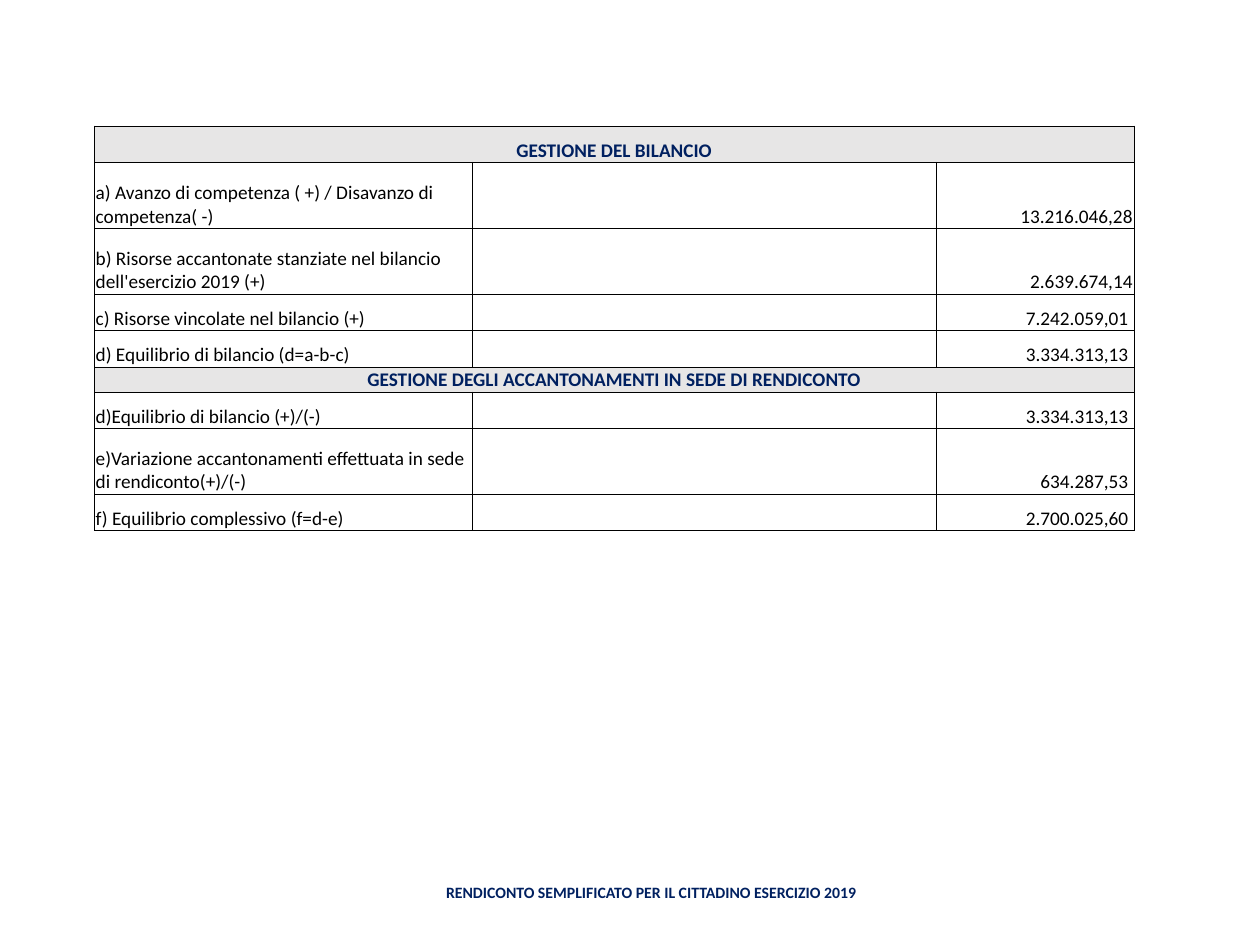
from lxml import etree
from pptx import Presentation
from pptx.dml.color import RGBColor
from pptx.enum.text import MSO_ANCHOR, PP_ALIGN
from pptx.oxml.ns import qn
from pptx.util import Pt

NAVY = RGBColor(0x00, 0x20, 0x60)
BLACK = RGBColor(0x00, 0x00, 0x00)
GREY = RGBColor(0xE7, 0xE6, 0xE6)

COLS = (216, 265, 113)
SHORT, TALL, THIN = 20.8, 37.7, 14.3

# Row height and texts; a single text is a heading across all columns.
ROWS = (
    (SHORT, "GESTIONE DEL BILANCIO"),
    (TALL, "a) Avanzo di competenza ( +) / Disavanzo di competenza( -)", "13.216.046,28"),
    (TALL, "b) Risorse accantonate stanziate nel bilancio dell'esercizio 2019 (+)", "2.639.674,14"),
    (SHORT, "c) Risorse vincolate nel bilancio (+)", "7.242.059,01 "),
    (SHORT, "d) Equilibrio di bilancio (d=a-b-c)", "3.334.313,13 "),
    (THIN, "GESTIONE DEGLI ACCANTONAMENTI IN SEDE DI RENDICONTO"),
    (SHORT, "d)Equilibrio di bilancio (+)/(-)", "3.334.313,13 "),
    (TALL, "e)Variazione accantonamenti effettuata in sede di rendiconto(+)/(-)", "634.287,53 "),
    (SHORT, "f) Equilibrio complessivo (f=d-e)", "2.700.025,60 "),
)


def write(frame, words, size, color, bold, align):
    frame.text = words
    para = frame.paragraphs[0]
    para.alignment = align
    for run in para.runs:
        font = run.font
        font.name, font.size, font.bold = "Calibri", Pt(size), bold
        font.color.rgb = color


def border(cell):
    props = cell._tc.get_or_add_tcPr()
    for side in ("lnL", "lnR", "lnT", "lnB"):
        line = etree.SubElement(props, qn(f"a:{side}"), w=str(Pt(0.5)))
        fill = etree.SubElement(line, qn("a:solidFill"))
        etree.SubElement(fill, qn("a:srgbClr"), val=str(BLACK))


def dress(cell, head):
    """Set the borders, insets, fill and empty-text size of a cell."""
    border(cell)
    cell.vertical_anchor = MSO_ANCHOR.BOTTOM
    cell.margin_left = cell.margin_right = cell.margin_top = Pt(0.7)
    cell.margin_bottom = 0
    if head:
        cell.fill.solid()
        cell.fill.fore_color.rgb = GREY
    else:
        cell.fill.background()
    end = cell.text_frame.paragraphs[0]._p.get_or_add_endParaRPr()
    end.set("sz", "1100")


def add_budget(slide, left, top):
    heights = [row[0] for row in ROWS]
    frame = slide.shapes.add_table(len(ROWS), len(COLS), Pt(left), Pt(top),
                                   Pt(sum(COLS)), Pt(sum(heights)))
    table = frame.table
    table.first_row = table.horz_banding = False
    for col, width in zip(table.columns, COLS):
        col.width = Pt(width)
    for i, (height, label, *value) in enumerate(ROWS):
        table.rows[i].height = Pt(height)
        cells = [table.cell(i, j) for j in range(len(COLS))]
        for cell in cells:
            dress(cell, not value)
        if value:
            write(cells[0].text_frame, label, 11, BLACK, False, PP_ALIGN.LEFT)
            write(cells[-1].text_frame, value[0], 11, BLACK, False, PP_ALIGN.RIGHT)
        else:
            cells[0].merge(cells[-1])
            write(cells[0].text_frame, label, 11, NAVY, True, PP_ALIGN.CENTER)


def add_footer(slide, left, top, width, height):
    box = slide.shapes.add_textbox(Pt(left), Pt(top), Pt(width), Pt(height))
    frame = box.text_frame
    frame.word_wrap = True
    frame.vertical_anchor = MSO_ANCHOR.MIDDLE
    write(frame, "RENDICONTO SEMPLIFICATO PER IL CITTADINO ESERCIZIO 2019",
          9, NAVY, True, PP_ALIGN.CENTER)


def main():
    deck = Presentation()
    deck.slide_width, deck.slide_height = Pt(720), Pt(540)
    slide = deck.slides.add_slide(deck.slide_layouts[6])
    add_budget(slide, 54, 72)
    add_footer(slide, 229.5, 492, 285, 36)
    deck.save("out.pptx")


if __name__ == "__main__":
    main()
